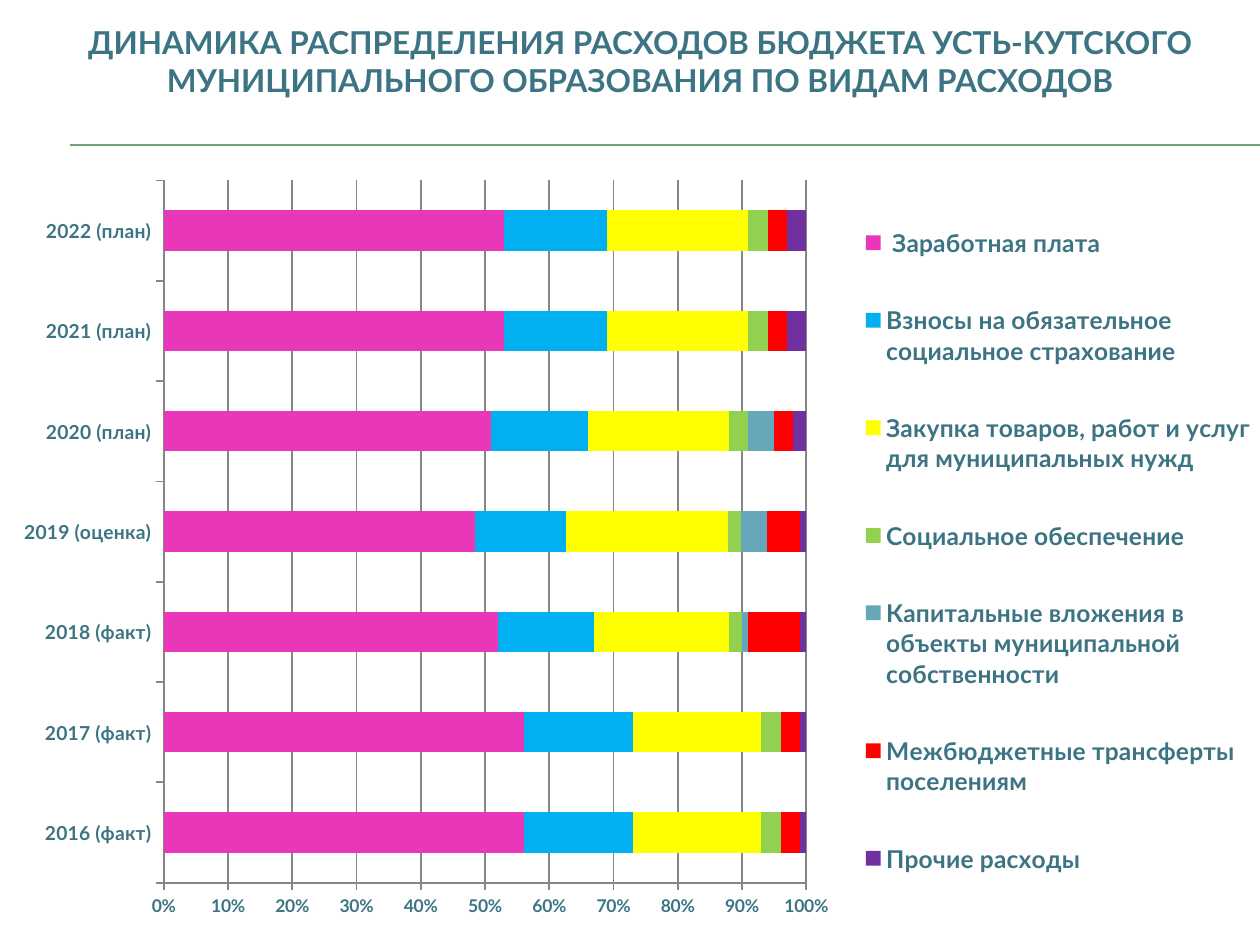
from lxml import etree
from pptx import Presentation
from pptx.chart.data import CategoryChartData
from pptx.dml.color import RGBColor
from pptx.enum.chart import XL_CHART_TYPE, XL_LEGEND_POSITION, XL_TICK_MARK
from pptx.enum.shapes import MSO_CONNECTOR
from pptx.enum.text import MSO_ANCHOR, MSO_AUTO_SIZE, PP_ALIGN
from pptx.oxml.ns import qn
from pptx.util import Cm, Pt

STACKED = XL_CHART_TYPE.BAR_STACKED_100
RIGHT = XL_LEGEND_POSITION.RIGHT
OUTSIDE = XL_TICK_MARK.OUTSIDE
STRAIGHT = MSO_CONNECTOR.STRAIGHT
MIDDLE = MSO_ANCHOR.MIDDLE
NO_AUTOFIT = MSO_AUTO_SIZE.NONE
CENTER = PP_ALIGN.CENTER

FONT = "Lato"
TEAL, GREEN, GRAY = "3C7483", "72A376", "868686"
TITLE = ("ДИНАМИКА РАСПРЕДЕЛЕНИЯ РАСХОДОВ БЮДЖЕТА УСТЬ-КУТСКОГО "
         "МУНИЦИПАЛЬНОГО ОБРАЗОВАНИЯ ПО ВИДАМ РАСХОДОВ")
YEARS = ["2016 (факт)", "2017 (факт)", "2018 (факт)", "2019 (оценка)",
         "2020 (план)", "2021 (план)", "2022 (план)"]
EXPENSES = [
    (" Заработная плата ", "E937BA", (56, 56, 52, 48, 51, 53, 53)),
    ("Взносы на обязательное социальное страхование", "00B0F0",
     (17, 17, 15, 14, 15, 16, 16)),
    ("Закупка товаров, работ и услуг для муниципальных нужд", "FFFF00",
     (20, 20, 21, 25, 22, 22, 22)),
    ("Социальное обеспечение", "92D050", (3, 3, 2, 2, 3, 3, 3)),
    ("Капитальные вложения в объекты муниципальной собственности", "66A7B9",
     (0, 0, 1, 4, 4, 0, 0)),
    ("Межбюджетные трансферты поселениям", "FF0000", (3, 3, 8, 5, 3, 3, 3)),
    ("Прочие расходы", "7030A0", (1, 1, 1, 1, 2, 3, 3)),
]


def rgb(color):
    return RGBColor.from_string(color)


def style_font(font, size):
    font.name = FONT
    font.size = Pt(size)
    font.bold = True
    font.color.rgb = rgb(TEAL)


def style_line(line, color, width):
    line.color.rgb = rgb(color)
    line.width = Pt(width)


def add_title(slide, x, y, w, h):
    sp = slide.shapes.title
    sp.left, sp.top, sp.width, sp.height = x, y, w, h
    tf = sp.text_frame
    tf.text = TITLE
    tf.word_wrap = True
    tf.auto_size = NO_AUTOFIT
    tf.vertical_anchor = MIDDLE
    p = tf.paragraphs[0]
    p.alignment = CENTER
    style_font(p.runs[0].font, 18)


def add_rule(slide, x, y, w, gap):
    """Draw a double horizontal rule."""
    for top in (y, y + gap):
        line = slide.shapes.add_connector(STRAIGHT, x, top, x + w, top)
        style_line(line.line, GREEN, 0.75)
        etree.SubElement(line.element.spPr, qn("a:effectLst"))


def set_layout(parent, index, x, y, w, h, inner=False):
    """Place a chart part by fractions of the chart area."""
    for old in parent.findall(qn("c:layout")):
        parent.remove(old)
    layout = etree.Element(qn("c:layout"))
    manual = etree.SubElement(layout, qn("c:manualLayout"))
    settings = [("layoutTarget", "inner")] if inner else []
    settings += [("xMode", "edge"), ("yMode", "edge"),
                 ("x", x), ("y", y), ("w", w), ("h", h)]
    for tag, value in settings:
        etree.SubElement(manual, qn(f"c:{tag}")).set("val", str(value))
    parent.insert(index, layout)


def style_axis(axis, size):
    axis.major_tick_mark = OUTSIDE
    style_font(axis.tick_labels.font, size)
    style_line(axis.format.line, GRAY, 1)


def add_expense_chart(slide, x, y, w, h):
    data = CategoryChartData(number_format="0")
    data.categories = YEARS
    for name, _, values in EXPENSES:
        data.add_series(name, values)
    chart = slide.shapes.add_chart(STACKED, x, y, w, h, data).chart
    chart.has_title = False
    style_font(chart.font, 18)

    plot = chart.plots[0]
    plot.gap_width = 150
    plot.overlap = 100
    plot.vary_by_categories = False
    for series, (_, color, _) in zip(plot.series, EXPENSES):
        series.format.fill.solid()
        series.format.fill.fore_color.rgb = rgb(color)

    style_axis(chart.category_axis, 11)
    axis = chart.value_axis
    style_axis(axis, 10)
    axis.minimum_scale, axis.maximum_scale, axis.major_unit = 0, 1, 0.1
    axis.tick_labels.number_format = "0%"
    axis.tick_labels.number_format_is_linked = False
    axis.has_major_gridlines = True
    style_line(axis.major_gridlines.format.line, GRAY, 1)

    chart.has_legend = True
    chart.legend.position = RIGHT
    chart.legend.include_in_layout = False
    style_font(chart.legend.font, 14)

    root = chart.element if hasattr(chart, "element") else chart._chartSpace
    set_layout(root.find(".//" + qn("c:plotArea")), 0,
               0.13, 0.02, 0.51, 0.92, inner=True)
    set_layout(root.find(".//" + qn("c:legend")), 1, 0.68, 0.02, 0.32, 0.97)


def main():
    prs = Presentation()
    prs.slide_width, prs.slide_height = Cm(25.4), Cm(19.05)
    slide = prs.slides.add_slide(prs.slide_layouts[5])
    add_rule(slide, Cm(1.42), Cm(2.92), Cm(23.98), Cm(0.02))
    add_title(slide, Cm(0.84), Cm(0.13), Cm(24.13), Cm(2.21))
    add_expense_chart(slide, 0, Cm(3.33), Cm(25.4), Cm(15.39))
    prs.save("out.pptx")


if __name__ == "__main__":
    main()
